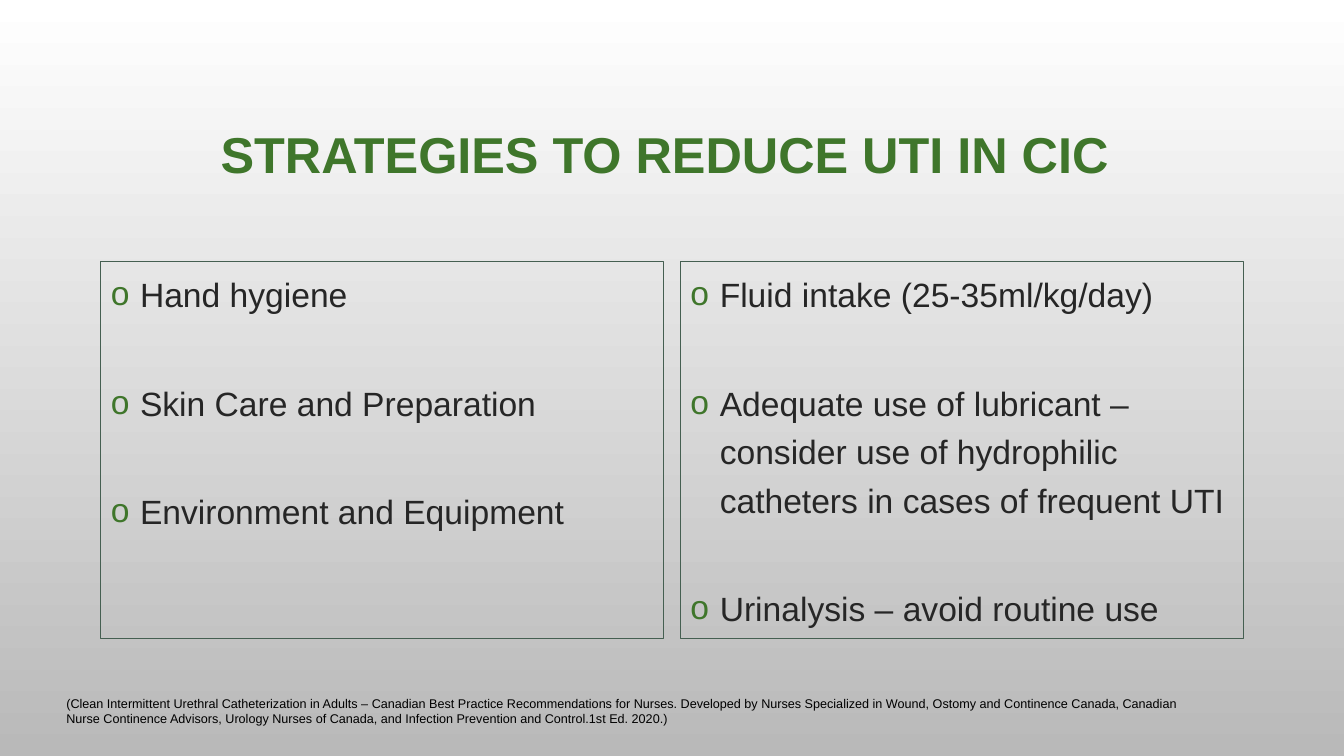
from dataclasses import dataclass

from lxml import etree
from pptx import Presentation
from pptx.dml.color import RGBColor
from pptx.enum.shapes import MSO_SHAPE
from pptx.enum.text import MSO_ANCHOR, MSO_AUTO_SIZE, PP_ALIGN
from pptx.oxml.ns import qn
from pptx.slide import Slide
from pptx.text.text import _Paragraph
from pptx.util import Inches, Pt

RECT = MSO_SHAPE.RECTANGLE
TOP, MIDDLE = MSO_ANCHOR.TOP, MSO_ANCHOR.MIDDLE
LEFT, CENTER = PP_ALIGN.LEFT, PP_ALIGN.CENTER
NO_FIT = MSO_AUTO_SIZE.NONE

WHITE = RGBColor(0xFF, 0xFF, 0xFF)
GREY = RGBColor(0xB9, 0xB9, 0xB9)
GREEN = RGBColor(0x3F, 0x76, 0x2B)
EDGE = RGBColor(0x45, 0x5F, 0x51)
DARK = RGBColor(0x26, 0x26, 0x26)
BLACK = RGBColor(0, 0, 0)
FONT = "Arial"

MARGIN, GAP, WIDTH = 1, 0.17, 5.58
INDENT = Inches(0.29)


@dataclass
class Panel:
    left: float
    items: list[str]


PANELS = [
    Panel(MARGIN, [
        "Hand hygiene",
        "Skin Care and Preparation",
        "Environment and Equipment",
    ]),
    Panel(MARGIN + WIDTH + GAP, [
        "Fluid intake (25-35ml/kg/day)",
        "Adequate use of lubricant – consider use of hydrophilic "
        "catheters in cases of frequent UTI",
        "Urinalysis – avoid routine use",
    ]),
]
TITLE = "STRATEGIES TO REDUCE UTI IN CIC "
SOURCE = (
    "(Clean Intermittent Urethral Catheterization in Adults – Canadian Best "
    "Practice Recommendations for Nurses. Developed by Nurses Specialized in "
    "Wound, Ostomy and Continence Canada, Canadian Nurse Continence Advisors, "
    "Urology Nurses of Canada, and Infection Prevention and Control.1st Ed. 2020.)"
)


def add_run(para: _Paragraph, text: str, size: int, color: RGBColor,
            bold: bool = False) -> None:
    run = para.add_run()
    run.text = text
    font = run.font
    font.name, font.size, font.bold = FONT, Pt(size), bold
    font.color.rgb = color


def add_bullet(para: _Paragraph) -> None:
    props = para._p.get_or_add_pPr()
    props.set("marL", str(INDENT))
    props.set("indent", str(-INDENT))
    tint = etree.SubElement(props, qn("a:buClr"))
    etree.SubElement(tint, qn("a:srgbClr")).set("val", str(GREEN))
    etree.SubElement(props, qn("a:buFont")).set("typeface", FONT)
    etree.SubElement(props, qn("a:buChar")).set("char", "o")


def add_panel(slide: Slide, panel: Panel) -> None:
    box = slide.shapes.add_shape(RECT, Inches(panel.left), Inches(2.59),
                                 Inches(WIDTH), Inches(3.74))
    box.shadow.inherit = False
    box.fill.background()
    box.line.color.rgb = EDGE
    box.line.width = Pt(0.75)
    frame = box.text_frame
    frame.word_wrap = True
    frame.vertical_anchor = TOP
    for i, item in enumerate(panel.items):
        para = frame.add_paragraph() if i else frame.paragraphs[0]
        add_bullet(para)
        para.alignment = LEFT
        para.line_spacing = 1.2
        if i:
            para.space_before = Pt(43)
        add_run(para, item, 24, DARK)


def add_title(slide: Slide) -> None:
    title = slide.shapes.title
    title.left, title.top = Inches(MARGIN), Inches(0.68)
    title.width, title.height = Inches(11.33), Inches(1.75)
    frame = title.text_frame
    frame.auto_size = NO_FIT
    frame.word_wrap = True
    frame.vertical_anchor = MIDDLE
    para = frame.paragraphs[0]
    para.alignment = CENTER
    para.line_spacing = 0.9
    add_run(para, TITLE, 36, GREEN, bold=True)


def add_source(slide: Slide) -> None:
    note = slide.shapes.add_textbox(Inches(0.56), Inches(6.85),
                                    Inches(11.52), Inches(0.4))
    note.text_frame.word_wrap = True
    add_run(note.text_frame.paragraphs[0], SOURCE, 9, BLACK)


def main() -> None:
    deck = Presentation()
    deck.slide_width, deck.slide_height = Inches(13.33), Inches(7.5)
    slide = deck.slides.add_slide(deck.slide_layouts[5])
    fill = slide.background.fill
    fill.gradient()
    fill.gradient_angle = 270
    for stop, color in zip(fill.gradient_stops, (WHITE, GREY)):
        stop.color.rgb = color
    add_title(slide)
    for panel in PANELS:
        add_panel(slide, panel)
    add_source(slide)
    deck.save("out.pptx")


if __name__ == "__main__":
    main()
